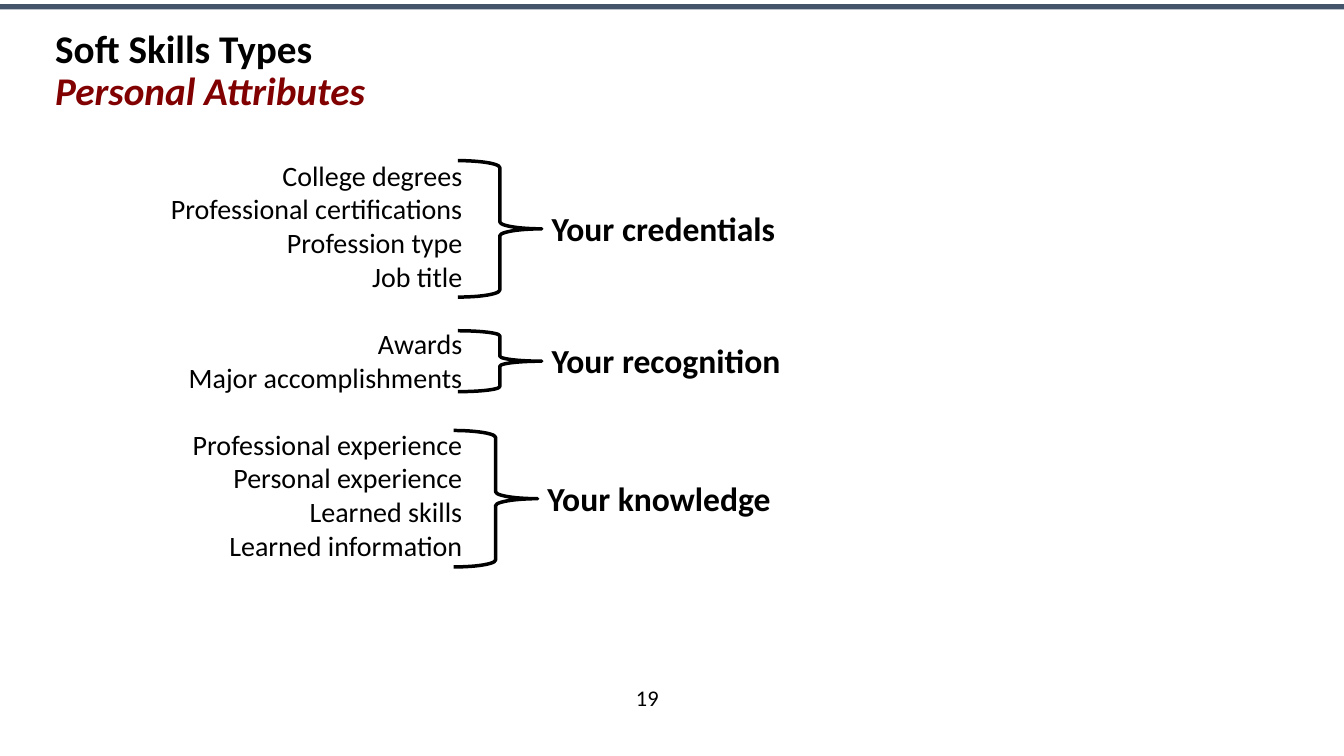
"""Build the "Soft Skills Types: Personal Attributes" slide."""
import lxml.etree
import pptx
import pptx.dml.color
import pptx.enum.shapes
import pptx.enum.text
import pptx.oxml.ns
import pptx.util

PX = 9525
THEME = {
    "font": "Calibri",
    "black": "000000",
    "maroon": "810000",
    "slate": "44546A",
    "title": 28,
    "label": 24,
    "body": 20,
    "number": 16,
}
ALIGN = pptx.enum.text.PP_ALIGN
ANCHOR = pptx.enum.text.MSO_ANCHOR
SHAPE = pptx.enum.shapes.MSO_SHAPE


def place(sp, *box):
    sp.left, sp.top, sp.width, sp.height = [v * PX for v in box]
    if sp.has_text_frame:
        sp.text_frame.word_wrap = True
        sp.text_frame.auto_size = pptx.enum.text.MSO_AUTO_SIZE.NONE
    return sp


def add_run(p, text, size, color="black", bold=False, italic=False):
    r = p.add_run()
    r.text = text
    r.font.name = THEME["font"]
    r.font.size = pptx.util.Pt(THEME[size])
    r.font.color.rgb = pptx.dml.color.RGBColor.from_string(THEME[color])
    r.font.bold = bold
    r.font.italic = italic


prs = pptx.Presentation()
prs.slide_width, prs.slide_height = 1280 * PX, 720 * PX
s = prs.slides.add_slide(prs.slide_layouts[1])

bar = s.shapes.add_shape(SHAPE.RECTANGLE, 0, 4 * PX, 1280 * PX, 5 * PX)
bar.shadow.inherit = False
bar.fill.solid()
bar.fill.fore_color.rgb = pptx.dml.color.RGBColor.from_string(THEME["slate"])
bar.line.fill.background()

number = place(s.shapes.add_textbox(0, 0, 0, 0), 581, 645, 71, 38)
number.text_frame.vertical_anchor = ANCHOR.MIDDLE
p = number.text_frame.paragraphs[0]
p.alignment = ALIGN.CENTER
add_run(p, "19", "number")

title = place(s.shapes.title, 43, 23, 1146, 90)
title.text_frame.vertical_anchor = ANCHOR.TOP
p = title.text_frame.paragraphs[0]
p.alignment = ALIGN.LEFT
p.line_spacing = 0.9
add_run(p, "Soft Skills Types", "title", bold=True)
p.add_line_break()
add_run(p, "Personal Attributes", "title", "maroon", bold=True, italic=True)

groups = [
    ("Your credentials", 436, 153, 130,
     ["College degrees", "Professional certifications", "Profession type", "Job title"]),
    ("Your recognition", 436, 315, 58,
     ["Awards", "Major accomplishments"]),
    ("Your knowledge", 432, 410, 130,
     ["Professional experience", "Personal experience", "Learned skills", "Learned information"]),
]
brace_width, label_height = 80, 48

body = place(s.placeholders[1], 148, 146, 302, 470)
tf = body.text_frame
tf.vertical_anchor = ANCHOR.TOP
for label, left, top, height, items in groups:
    for item in items:
        first = item == groups[0][4][0]
        p = tf.paragraphs[0] if first else tf.add_paragraph()
        pPr = p._p.get_or_add_pPr()
        pPr.set("marL", "0")
        pPr.set("indent", "0")
        lxml.etree.SubElement(pPr, pptx.oxml.ns.qn("a:buNone"))
        p.alignment = ALIGN.RIGHT
        new_group = item == items[0] and not first
        p.space_before = pptx.util.Pt(24 if new_group else 0)
        add_run(p, item, "body")

    brace = s.shapes.add_shape(SHAPE.RIGHT_BRACE, 0, 0, 0, 0)
    place(brace, left, top, brace_width, height)
    brace.shadow.inherit = False
    brace.fill.background()
    brace.line.color.rgb = pptx.dml.color.RGBColor.from_string(THEME["black"])
    brace.line.width = pptx.util.Pt(2.5)

    label_top = top + (height - label_height) // 2 - 1
    box = place(s.shapes.add_textbox(0, 0, 0, 0),
                left + brace_width, label_top, 620, label_height)
    add_run(box.text_frame.paragraphs[0], label, "label", bold=True)

prs.save("out.pptx")
